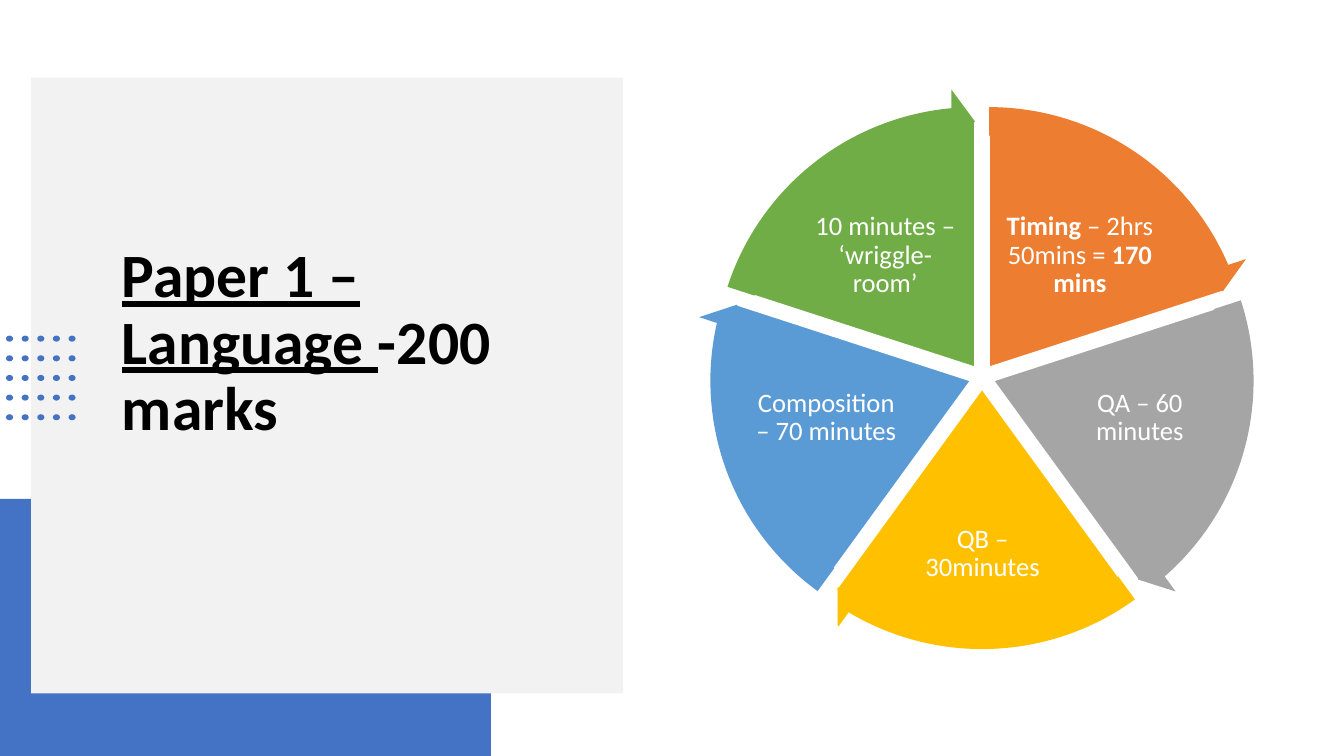
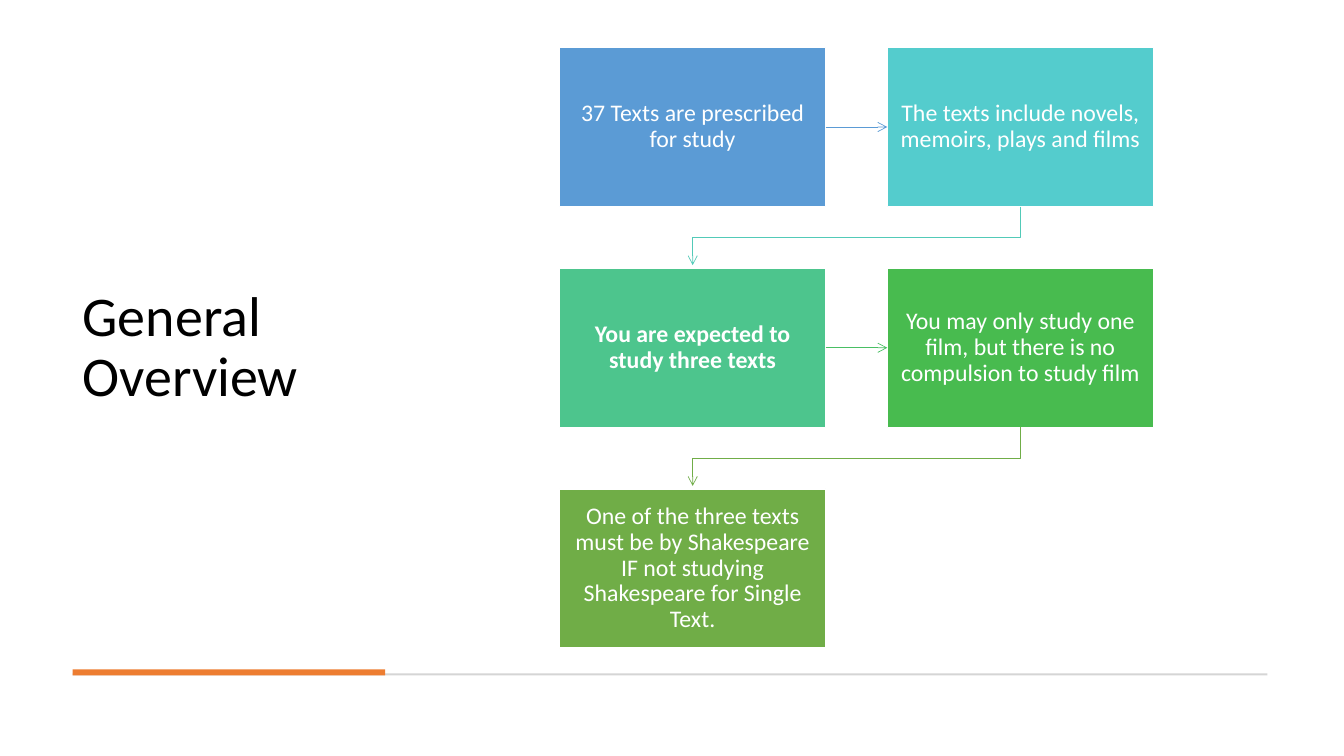
from math import cos, radians, sin

from lxml.etree import SubElement
from pptx import Presentation
from pptx.dml.color import RGBColor
from pptx.enum.shapes import MSO_CONNECTOR as CONNECTOR, MSO_SHAPE as SHAPE
from pptx.enum.text import MSO_ANCHOR as ANCHOR, MSO_AUTO_SIZE as AUTO_SIZE, PP_ALIGN as ALIGN
from pptx.oxml.ns import qn
from pptx.util import Inches, Pt

FONT = "Calibri"
BLACK, WHITE = "000000", "FFFFFF"
BLUE, ORANGE, PALE, RULE = "4472C4", "ED7D31", "F2F2F2", "D5D5D5"
GREY, GOLD, SKY, GREEN = "A5A5A5", "FFC000", "5B9BD5", "70AD47"


def add_block(shapes, kind, box, fill, line=None):
    shape = shapes.add_shape(kind, *[Inches(length) for length in box])
    shape.shadow.inherit = False
    shape.fill.solid()
    shape.fill.fore_color.rgb = RGBColor.from_string(fill)
    if line:
        shape.line.color.rgb = RGBColor.from_string(line)
        shape.line.width = Pt(1)
    else:
        shape.line.fill.background()
    return shape


def write(shape, runs, size, color, align, box=None):
    if box:
        shape.left, shape.top, shape.width, shape.height = [Inches(length) for length in box]
    frame = shape.text_frame
    frame.word_wrap = True
    frame.auto_size = AUTO_SIZE.NONE
    frame.vertical_anchor = ANCHOR.MIDDLE
    paragraph = frame.paragraphs[0]
    paragraph.alignment = align
    paragraph.line_spacing = 0.9
    paragraph.font.name = FONT
    paragraph.font.size = Pt(size)
    paragraph.font.color.rgb = RGBColor.from_string(color)
    for text, bold, underline in runs:
        run = paragraph.add_run()
        run.text = text
        run.font.bold = bold
        run.font.underline = underline
    return frame


presentation = Presentation()
presentation.slide_width = Inches(13.33)
presentation.slide_height = Inches(7.5)
title_only = presentation.slide_layouts[5]

slide = presentation.slides.add_slide(title_only)
add_block(slide.shapes, SHAPE.RECTANGLE, (0, 4.95, 4.87, 2.55), BLUE)
add_block(slide.shapes, SHAPE.RECTANGLE, (0.31, 0.77, 5.87, 6.11), PALE)
title = slide.shapes.title
slide.shapes.element.append(title.element)
frame = write(
    title,
    [("Paper 1 – Language ", True, True), ("-200 marks", True, False)],
    44, BLACK, ALIGN.LEFT, (1.11, 1.47, 4.59, 4.56),
)
frame.margin_bottom = Inches(0.72)

dots = slide.shapes.add_group_shape()
for column in range(5):
    for row in range(5):
        box = (0.06 + 0.155 * column, 3.33 + 0.195 * row, 0.07, 0.06)
        add_block(dots.shapes, SHAPE.OVAL, box, BLUE)

segments = [
    (ORANGE, (9.92, 2.01, 1.58, 1.05),
     [("Timing", True, False), (" – 2hrs 50mins = ", False, False), ("170 mins", True, False)]),
    (GREY, (10.57, 3.56, 1.47, 1.17), [("QA – 60 minutes", False, False)]),
    (GOLD, (9.04, 4.85, 1.41, 1.29), [("QB – 30minutes", False, False)]),
    (SKY, (7.46, 3.56, 1.47, 1.17), [("Composition – 70 minutes", False, False)]),
    (GREEN, (7.99, 2.01, 1.58, 1.05), [("10 minutes – ‘wriggle-room’", False, False)]),
]
ANGLE_UNIT = 0.6
PIE_SIZE, ARROW_SIZE = 4.92, 5.53
wheel = slide.shapes.add_group_shape()
cycle_arrows = []
for index, (color, text_box, runs) in enumerate(segments):
    start = (270 + 72 * index) % 360
    end = (start + 72) % 360
    middle = radians(start + 36)
    center_x = 9.74 + 0.12 * cos(middle)
    center_y = 3.74 + 0.12 * sin(middle)
    box = (center_x - PIE_SIZE / 2, center_y - PIE_SIZE / 2, PIE_SIZE, PIE_SIZE)
    pie = add_block(wheel.shapes, SHAPE.PIE, box, color, WHITE)
    pie.adjustments[0] = start * ANGLE_UNIT
    pie.adjustments[1] = end * ANGLE_UNIT
    label = wheel.shapes.add_textbox(*[Inches(length) for length in text_box])
    frame = write(label, runs, 19, WHITE, ALIGN.CENTER)
    frame.margin_left = frame.margin_right = Inches(0.03)
    frame.margin_top = frame.margin_bottom = Inches(0.03)
    cycle_arrows.append((center_x, center_y, start, end, color))

for center_x, center_y, start, end, color in cycle_arrows:
    box = (center_x - ARROW_SIZE / 2, center_y - ARROW_SIZE / 2, ARROW_SIZE, ARROW_SIZE)
    arrow = add_block(wheel.shapes, SHAPE.CIRCULAR_ARROW, box, color)
    values = (0.051, 3.275, end * ANGLE_UNIT - 3.28, start * ANGLE_UNIT, 0.059)
    for position, value in enumerate(values):
        arrow.adjustments[position] = value

slide = presentation.slides.add_slide(title_only)
write(slide.shapes.title, [("General Overview", False, False)],
      40, BLACK, ALIGN.LEFT, (0.72, 0.47, 3.1, 5.97))
add_block(slide.shapes, SHAPE.RECTANGLE, (0.72, 6.68, 11.85, 0.02), RULE)
add_block(slide.shapes, SHAPE.RECTANGLE, (0.72, 6.64, 3.1, 0.06), ORANGE)

steps = [
    ("37 Texts are prescribed for study", False, SKY),
    ("The texts include novels, memoirs, plays and films", False, "54CCCD"),
    ("You are expected to study three texts", True, "4DC58D"),
    ("You may only study one film, but there is no compulsion to study film", False, "48BB4F"),
    ("One of the three texts must be by Shakespeare IF not studying Shakespeare for Single Text.",
     False, GREEN),
]
cards = []
for index, (text, bold, color) in enumerate(steps):
    row, column = divmod(index, 2)
    box = (5.55 + 3.25 * column, 0.47 + 2.19 * row, 2.64, 1.58)
    card = add_block(slide.shapes, SHAPE.RECTANGLE, box, color, WHITE)
    frame = write(card, [(text, bold, False)], 17, WHITE, ALIGN.CENTER)
    frame.margin_left = frame.margin_right = Inches(0.13)
    frame.margin_top = frame.margin_bottom = Inches(0.14)
    cards.append(card)

arrow_colors = [SKY, "52CAB8", "49BF64", GREEN]
for index, color in enumerate(arrow_colors):
    source, target = cards[index], cards[index + 1]
    if index % 2 == 0:
        arrow = slide.shapes.add_connector(CONNECTOR.STRAIGHT, 0, 0, 0, 0)
        arrow.begin_connect(source, 3)
        arrow.end_connect(target, 1)
        SubElement(arrow.element.spPr, qn("a:effectLst"))
    else:
        start_x = source.left + source.width // 2
        start_y = source.top + source.height
        end_x = target.left + target.width // 2
        turn_y = (start_y + target.top) // 2
        builder = slide.shapes.build_freeform(start_x, start_y)
        builder.add_line_segments(
            [(start_x, turn_y), (end_x, turn_y), (end_x, target.top - Inches(0.03))], close=False)
        arrow = builder.convert_to_shape()
        arrow.fill.background()
        arrow.shadow.inherit = False
    arrow.line.color.rgb = RGBColor.from_string(color)
    arrow.line.width = Pt(0.5)
    SubElement(arrow.element.spPr.find(qn("a:ln")), qn("a:tailEnd"), type="arrow")

presentation.save("out.pptx")
